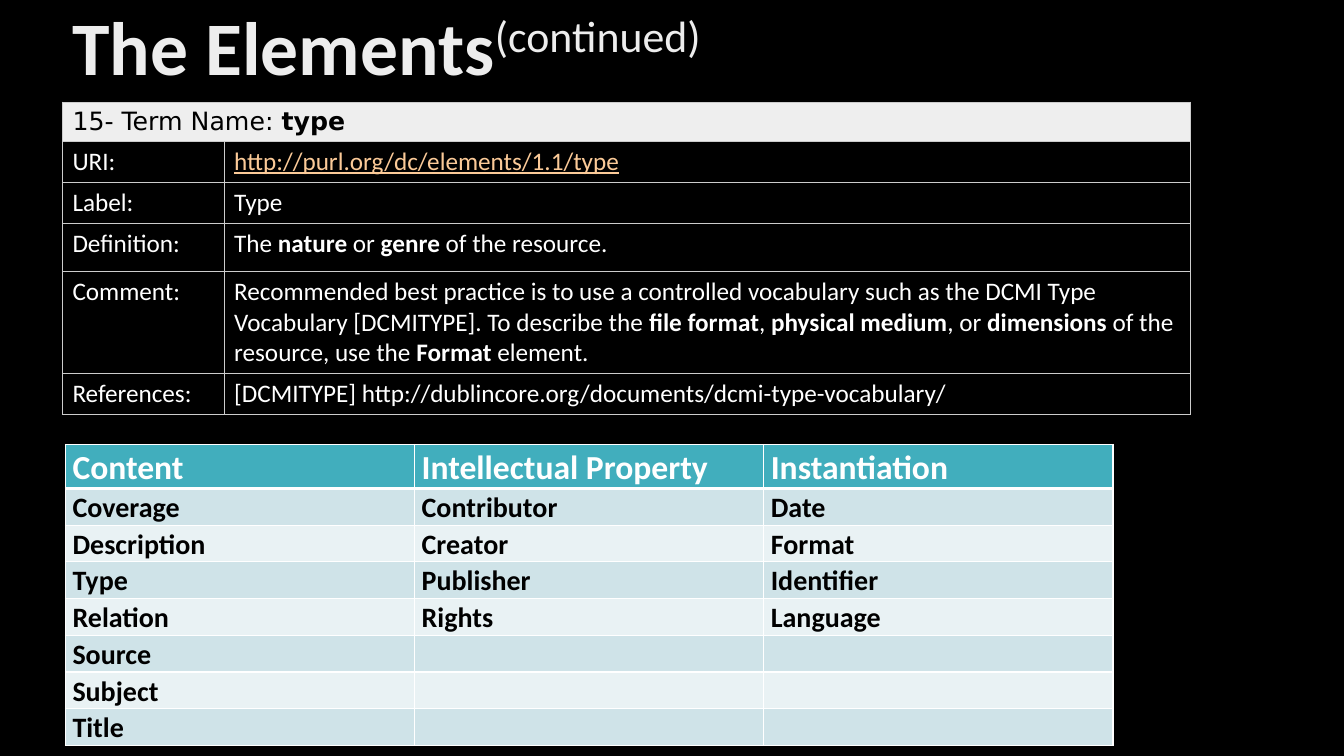
"""Build the slide on the Dublin Core element "type"."""
import pptx
import pptx.dml.color
import pptx.enum.text
import pptx.oxml
import pptx.oxml.ns
import pptx.util

Pt = pptx.util.Pt

TITLE = ("The Elements", "(continued)")
TERM = [
    ("15- Term Name: *type*", ""),
    ("URI:", "http://purl.org/dc/elements/1.1/type"),
    ("Label:", "Type"),
    ("Definition:", "The *nature* or *genre* of the resource."),
    ("Comment:", "Recommended best practice is to use a controlled vocabulary such as "
     "the DCMI Type Vocabulary [DCMITYPE]. To describe the *file format*, *physical "
     "medium*, or *dimensions* of the resource, use the *Format* element."),
    ("References:", "[DCMITYPE] http://dublincore.org/documents/dcmi-type-vocabulary/"),
]
TERM_COLS = [115.5, 690]
TERM_ROWS = [28.2, 29.2, 29.2, 34.4, 73.1, 29.2]
GROUPS = {
    "Content": ["Coverage", "Description", "Type", "Relation", "Source", "Subject", "Title"],
    "Intellectual Property": ["Contributor", "Creator", "Publisher", "Rights"],
    "Instantiation": ["Date", "Format", "Identifier", "Language"],
}
GROUP_COLS = [249.4] * 3
GROUP_ROWS = [31.3] + [26.1] * 7
BANDS = ["E9F2F4", "CFE3E8"]


def rgb(code):
    return pptx.dml.color.RGBColor.from_string(code)


def add_grid(s, left, top, cols, rows):
    frame = s.shapes.add_table(len(rows), len(cols), Pt(left), Pt(top),
                               Pt(sum(cols)), Pt(sum(rows)))
    tbl = frame.table
    tbl.first_row = tbl.horz_banding = False
    for col, width in zip(tbl.columns, cols):
        col.width = Pt(width)
    for row, height in zip(tbl.rows, rows):
        row.height = Pt(height)
    return tbl


def set_borders(cell, color, **widths):
    tcPr = cell._tc.get_or_add_tcPr()
    for side in "LRTB":
        tcPr.append(pptx.oxml.parse_xml(
            f'<a:ln{side} {pptx.oxml.ns.nsdecls("a")} w="{Pt(widths.get(side, widths["all"]))}">'
            f'<a:solidFill><a:srgbClr val="{color}"/></a:solidFill></a:ln{side}>'))


def set_fill(cell, color):
    if color:
        cell.fill.solid()
        cell.fill.fore_color.rgb = rgb(color)
    else:
        cell.fill.background()


def write(cell, text, size, color, font="Calibri", bold=False):
    p = cell.text_frame.paragraphs[0]
    p.font.size, p.font.name = Pt(size), font
    p.font.color.rgb = rgb(color)
    for i, part in enumerate(text.split("*")):
        if part:
            r = p.add_run()
            r.text = part
            r.font.bold = bold or i % 2 == 1
    return p


def add_title(s):
    sp = s.shapes.title
    sp.left, sp.top, sp.width, sp.height = Pt(44.6), Pt(0), Pt(828), Pt(72.7)
    tf = sp.text_frame
    tf.auto_size = pptx.enum.text.MSO_AUTO_SIZE.NONE
    tf.vertical_anchor = pptx.enum.text.MSO_ANCHOR.MIDDLE
    p = tf.paragraphs[0]
    p.alignment = pptx.enum.text.PP_ALIGN.LEFT
    p.line_spacing = 0.9
    p.font.size, p.font.name = Pt(54), "Calibri"
    p.font.color.rgb = rgb("EDEDED")
    for text, bold in zip(TITLE, (True, False)):
        r = p.add_run()
        r.text, r.font.bold = text, bold
    r.font._element.set("baseline", "30000")


def add_term(s):
    tbl = add_grid(s, 44.6, 72.9, TERM_COLS, TERM_ROWS)
    tbl.cell(0, 0).merge(tbl.cell(0, 1))
    for i, texts in enumerate(TERM):
        for j, text in enumerate(texts):
            cell = tbl.cell(i, j)
            set_borders(cell, "CCCCCC", all=0.75)
            set_fill(cell, "EEEEEE" if i == 0 else None)
            is_link = text.startswith("http")
            color = "000000" if i == 0 else "FBCA98" if is_link else "FFFFFF"
            p = write(cell, text, 18, color, "DejaVu Sans" if i == 0 else "Calibri")
            if is_link:
                p.font.underline = True


def add_groups(s):
    tbl = add_grid(s, 46.8, 317.5, GROUP_COLS, GROUP_ROWS)
    for j, (group, names) in enumerate(GROUPS.items()):
        column = [group] + names
        for i in range(len(GROUP_ROWS)):
            cell = tbl.cell(i, j)
            head = i == 0
            set_borders(cell, "FFFFFF", all=1, **({"B": 3} if head else {"T": 3} if i == 1 else {}))
            set_fill(cell, "41AEBD" if head else BANDS[i % 2])
            cell.margin_left = cell.margin_right = Pt(5)
            cell.margin_top = cell.margin_bottom = Pt(0)
            if i < len(column):
                p = write(cell, column[i], 24 if head else 20,
                          "FFFFFF" if head else "000000", bold=True)
                p.line_spacing = 1.07


def main():
    prs = pptx.Presentation()
    prs.slide_width, prs.slide_height = Pt(960), Pt(540)
    s = prs.slides.add_slide(prs.slide_layouts[5])
    s.background.fill.solid()
    s.background.fill.fore_color.rgb = rgb("000000")
    add_title(s)
    add_term(s)
    add_groups(s)
    prs.save("out.pptx")


if __name__ == "__main__":
    main()
